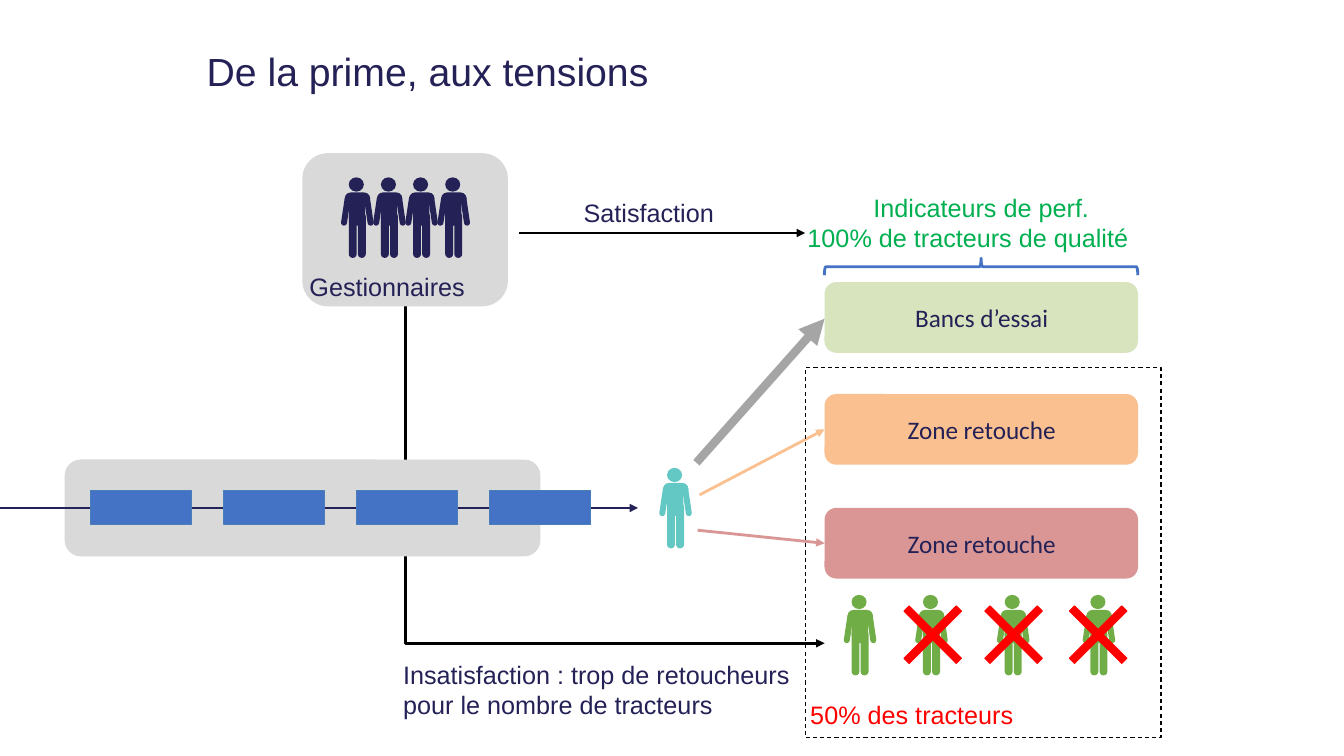
import pptx
import pptx.dml.color
import pptx.enum.dml
import pptx.enum.shapes
import pptx.enum.text
import pptx.oxml
import pptx.util
from pptx.util import Cm

SHAPES = pptx.enum.shapes.MSO_SHAPE
ALIGN = pptx.enum.text.PP_ALIGN
ANCHOR = pptx.enum.text.MSO_ANCHOR
DRAWING = 'xmlns:a="http://schemas.openxmlformats.org/drawingml/2006/main"'

COLOURS = {
    "navy": "242156", "black": "000000", "grey": "D9D9D9", "arrow": "A5A5A5",
    "blue": "4472C4", "blue_edge": "4A7EBB", "teal": "63C8C4",
    "green": "70AD47", "perf": "00B050", "red": "FF0000",
    "bench": "D7E4BD", "orange": "FAC090", "pink": "D99694",
}

BODY_PARTS = [
    (SHAPES.OVAL, 0.15, 0, 0.38, 0.36, 0),
    (SHAPES.ROUNDED_RECTANGLE, 0, 0.46, 0.15, 0.76, 8.6),
    (SHAPES.ROUNDED_RECTANGLE, 0.15, 0.89, 0.2, 1.14, 0),
    (SHAPES.ROUNDED_RECTANGLE, 0.38, 0.89, 0.2, 1.14, 0),
    (SHAPES.ROUNDED_RECTANGLE, 0.15, 0.46, 0.41, 0.76, 0),
    (SHAPES.ROUNDED_RECTANGLE, 0.05, 0.38, 0.64, 0.3, 0),
    (SHAPES.ROUNDED_RECTANGLE, 0.58, 0.46, 0.15, 0.76, 351.6),
]


class Diagram:
    """Draw the elements of one slide in a shared style."""

    def __init__(self, slide):
        self.slide = slide
        self.shapes = slide.shapes
        self.frame_format = {
            "margin_left": Cm(0.13), "margin_right": Cm(0.13),
            "margin_top": Cm(0.13), "margin_bottom": Cm(0.13),
            "auto_size": pptx.enum.text.MSO_AUTO_SIZE.SHAPE_TO_FIT_TEXT,
        }

    def colour(self, name):
        return pptx.dml.color.RGBColor.from_string(COLOURS[name])

    def paint(self, shape, fill=None, line=None, width=0.75):
        shape.shadow.inherit = False
        if fill:
            shape.fill.solid()
            shape.fill.fore_color.rgb = self.colour(fill)
        else:
            shape.fill.background()
        if line:
            self.stroke(shape, line, width)
        else:
            shape.line.fill.background()
        return shape

    def stroke(self, shape, colour, width):
        shape.line.color.rgb = self.colour(colour)
        shape.line.width = pptx.util.Pt(width)

    def arrowhead(self, shape):
        shape.line._get_or_add_ln().append(
            pptx.oxml.parse_xml(f'<a:tailEnd {DRAWING} type="triangle"/>'))

    def block(self, kind, box, shapes=None, rotation=0, **style):
        shapes = self.shapes if shapes is None else shapes
        shape = shapes.add_shape(kind, *map(Cm, box))
        shape.rotation = rotation
        return self.paint(shape, **style)

    def outline(self, points, closed=True, **style):
        points = [(Cm(x), Cm(y)) for x, y in points]
        builder = self.shapes.build_freeform(*points[0])
        builder.add_line_segments(points[1:], close=closed)
        return self.paint(builder.convert_to_shape(), **style)

    def arrow(self, start, end, colour, width=2):
        connector = self.shapes.add_connector(
            pptx.enum.shapes.MSO_CONNECTOR.STRAIGHT, *map(Cm, start + end))
        self.stroke(connector, colour, width)
        self.arrowhead(connector)
        connector._element.spPr.append(
            pptx.oxml.parse_xml(f"<a:effectLst {DRAWING}/>"))

    def text(self, box, lines, colour="navy", size=18, font="Arial", shapes=None,
             wrap=False, anchor=ANCHOR.TOP, alignments=(ALIGN.LEFT, ALIGN.LEFT)):
        shapes = self.shapes if shapes is None else shapes
        frame = shapes.add_textbox(*map(Cm, box)).text_frame
        frame_format = {**self.frame_format, "word_wrap": wrap, "vertical_anchor": anchor}
        for name, value in frame_format.items():
            setattr(frame, name, value)
        frame.text = "\n".join(lines)
        for paragraph, alignment in zip(frame.paragraphs, alignments):
            paragraph.alignment = alignment
            run_font = paragraph.runs[0].font
            for name, value in {"name": font, "size": pptx.util.Pt(size)}.items():
                setattr(run_font, name, value)
            run_font.color.rgb = self.colour(colour)

    def person(self, left, top, colour):
        group = self.shapes.add_group_shape()
        for kind, x, y, width, height, rotation in BODY_PARTS:
            part = self.block(kind, (left + x, top + y, width, height),
                              group.shapes, rotation, fill=colour)
            if kind == SHAPES.ROUNDED_RECTANGLE:
                part.adjustments[0] = 0.5

    def zone(self, top, label, colour):
        group = self.shapes.add_group_shape()
        self.block(SHAPES.ROUNDED_RECTANGLE, (20.78, top, 7.9, 1.78),
                   group.shapes, fill=colour)
        self.text((20.88, top + 0.38, 7.72, 1.02), [label], font="Calibri",
                  shapes=group.shapes, wrap=True, anchor=ANCHOR.MIDDLE,
                  alignments=[ALIGN.CENTER])

    def cross(self, left, top, size=1.45, notch=0.13):
        middle = size / 2
        near, far = middle - notch, middle + notch
        edge = size - notch
        corners = [(0, notch), (notch, 0), (middle, near), (edge, 0),
                   (size, notch), (far, middle), (size, edge), (edge, size),
                   (middle, far), (notch, size), (0, edge), (near, middle)]
        self.outline([(left + x, top + y) for x, y in corners],
                     fill="red", line="red")


def main():
    presentation = pptx.Presentation()
    presentation.slide_width, presentation.slide_height = Cm(33.87), Cm(19.05)
    diagram = Diagram(presentation.slides.add_slide(presentation.slide_layouts[6]))

    dissatisfaction = diagram.outline(
        [(10.21, 7.72), (10.21, 16.21), (20.78, 16.21)],
        closed=False, line="black", width=2)
    diagram.arrowhead(dissatisfaction)
    diagram.block(SHAPES.ROUNDED_RECTANGLE, (7.62, 3.86, 5.18, 3.86), fill="grey")
    diagram.text((5.08, 1.07, 22.86, 1.45), ["De la prime, aux tensions"],
                 size=28, wrap=True, anchor=ANCHOR.MIDDLE)

    diagram.block(SHAPES.ROUNDED_RECTANGLE, (1.63, 11.58, 11.99, 2.44), fill="grey")
    diagram.arrow((-2.87, 12.8), (16.08, 12.8), "navy")
    for station in range(4):
        diagram.block(SHAPES.RECTANGLE, (2.29 + 3.35 * station, 12.37, 2.54, 0.84),
                      fill="blue", line="blue_edge")
    diagram.person(16.66, 11.79, "teal")

    for top, label, colour in [(7.11, "Bancs d’essai", "bench"),
                               (9.93, "Zone retouche", "orange"),
                               (12.8, "Zone retouche", "pink")]:
        diagram.zone(top, label, colour)
    diagram.arrow((17.55, 11.66), (20.78, 8.03), "arrow", 6)
    diagram.arrow((17.63, 12.47), (20.78, 10.82), "orange")
    diagram.arrow((17.58, 13.36), (20.78, 13.69), "pink")

    rework = diagram.block(SHAPES.RECTANGLE, (20.29, 9.27, 8.97, 9.32), line="black")
    rework.line.dash_style = pptx.enum.dml.MSO_LINE.DASH
    diagram.text((20.29, 17.48, 5.72, 1.02), ["50% des tracteurs"], "red")
    for left in (21.31, 23.11, 25.17, 27.33):
        diagram.person(left, 14.99, "green")

    diagram.block(SHAPES.RIGHT_BRACE, (24.51, 2.77, 0.43, 7.9), rotation=270,
                  line="blue", width=2)
    diagram.text((20.22, 4.72, 9.02, 1.8),
                 ["Indicateurs de perf.", "100% de tracteurs de qualité"], "perf",
                 alignments=(ALIGN.CENTER, ALIGN.LEFT))

    for manager in range(4):
        diagram.person(8.64 + 0.81 * manager, 4.47, "navy")
    diagram.text((7.67, 6.71, 4.37, 1.02), ["Gestionnaires"])
    diagram.arrow((13.08, 5.87), (20.29, 5.87), "black")
    diagram.text((14.58, 4.85, 3.71, 1.02), ["Satisfaction"])
    for left in (22.78, 24.82, 26.95):
        diagram.cross(left, 15.27)
    diagram.text((10.03, 16.48, 10.8, 1.8),
                 ["Insatisfaction : trop de retoucheurs", "pour le nombre de tracteurs"])

    presentation.save("out.pptx")


if __name__ == "__main__":
    main()
